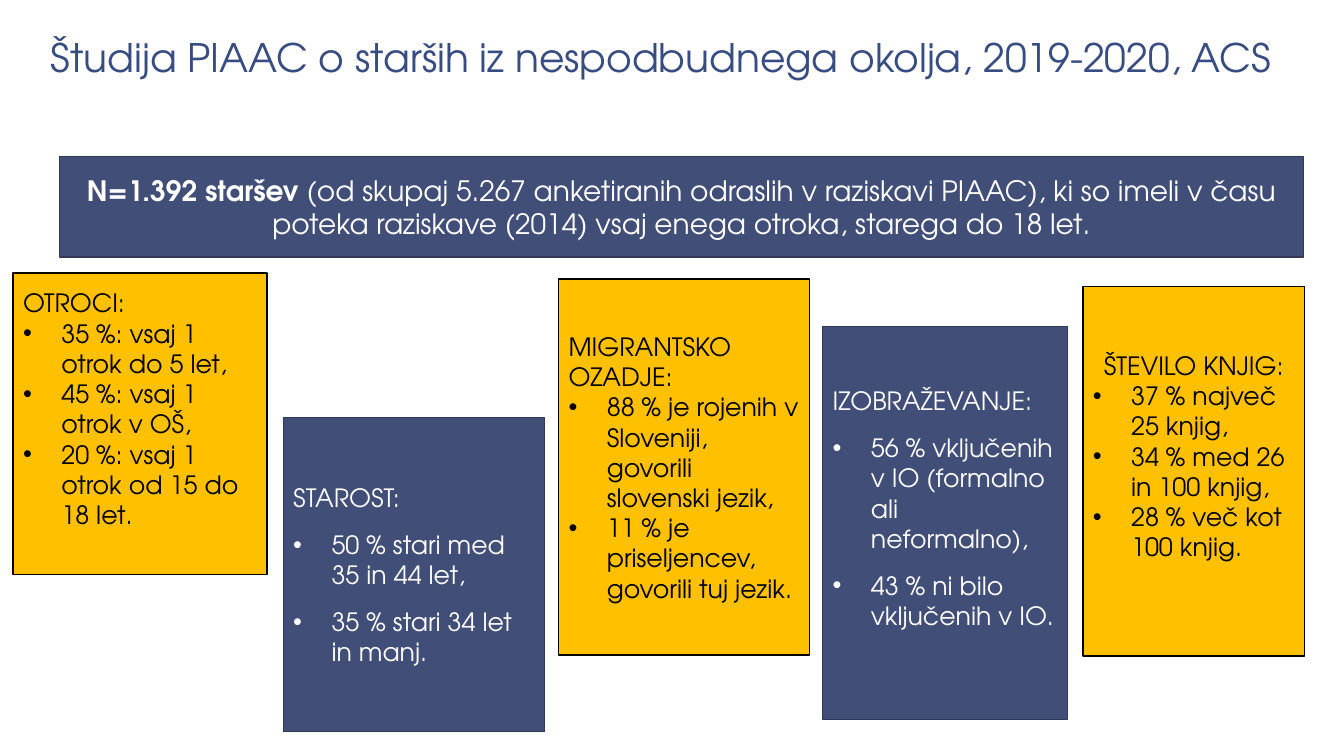
from dataclasses import dataclass

from lxml import etree
from pptx import Presentation
from pptx.dml.color import RGBColor
from pptx.enum.shapes import MSO_SHAPE
from pptx.enum.text import MSO_ANCHOR, MSO_AUTO_SIZE, PP_ALIGN
from pptx.oxml.ns import qn
from pptx.util import Inches, Pt

RECTANGLE = MSO_SHAPE.RECTANGLE
LEFT, CENTER = PP_ALIGN.LEFT, PP_ALIGN.CENTER
MIDDLE, BOTTOM = MSO_ANCHOR.MIDDLE, MSO_ANCHOR.BOTTOM
NO_AUTOFIT = MSO_AUTO_SIZE.NONE

FONT = "TeX Gyre Adventor"
BULLET_INDENT = 0.38
BASE_INSET = 0.05
LINE_HEIGHT = 0.3


@dataclass(frozen=True)
class Palette:
    fill: str
    line: str
    text: str


YELLOW = Palette("FFC000", "000000", "000000")
BLUE = Palette("414E77", "303A58", "FFFFFF")


@dataclass(frozen=True)
class Card:
    box: tuple[float, float, float, float]
    palette: Palette
    heading: str
    findings: tuple[str, ...]
    heading_align: PP_ALIGN = LEFT
    gap: int = 0
    free_lines: int = 0


CARDS = (
    Card((0.13, 2.71, 2.52, 2.99), YELLOW, "OTROCI:",
         ("35 %: vsaj 1 otrok do 5 let,", "45 %: vsaj 1 otrok v OŠ,",
          "20 %: vsaj 1 otrok od 15 do 18 let."), free_lines=1),
    Card((2.81, 4.14, 2.59, 3.12), BLUE, "STAROST:",
         ("50 % stari med 35 in 44 let,", "35 % stari 34 let in manj."), gap=12),
    Card((5.54, 2.77, 2.49, 3.73), YELLOW, "MIGRANTSKO OZADJE:",
         ("88 % je rojenih v Sloveniji, govorili slovenski jezik,",
          "11 % je priseljencev, govorili tuj jezik.")),
    Card((8.16, 3.24, 2.43, 3.9), BLUE, "IZOBRAŽEVANJE:",
         ("56 % vključenih v IO (formalno ali neformalno),",
          "43 % ni bilo vključenih v IO."), gap=12, free_lines=1),
    Card((10.74, 2.84, 2.2, 3.67), YELLOW, "ŠTEVILO KNJIG:",
         ("37 % največ 25 knjig,", "34 % med 26 in 100 knjig,",
          "28 % več kot 100 knjig."), heading_align=CENTER, free_lines=1),
)


def rgb(value: str) -> RGBColor:
    return RGBColor.from_string(value)


def write(paragraph, text: str, *, size: int, color: str, bold: bool = False,
          align: PP_ALIGN = LEFT, before: int = 0, bullet: bool = False) -> None:
    if bullet:
        properties = paragraph._p.get_or_add_pPr()
        properties.set("marL", str(Inches(BULLET_INDENT)))
        properties.set("indent", str(-Inches(BULLET_INDENT)))
        etree.SubElement(properties, qn("a:buFont")).set("typeface", "Arial")
        etree.SubElement(properties, qn("a:buChar")).set("char", "•")
    paragraph.alignment = align
    if before:
        paragraph.space_before = Pt(before)
    run = paragraph.add_run()
    run.text = text
    run.font.name = FONT
    run.font.size = Pt(size)
    run.font.bold = bold
    run.font.color.rgb = rgb(color)


def add_panel(slide, box: tuple[float, float, float, float], palette: Palette):
    panel = slide.shapes.add_shape(RECTANGLE, *map(Inches, box))
    panel.shadow.inherit = False
    panel.fill.solid()
    panel.fill.fore_color.rgb = rgb(palette.fill)
    panel.line.color.rgb = rgb(palette.line)
    panel.line.width = Pt(1)
    panel.text_frame.word_wrap = True
    panel.text_frame.vertical_anchor = MIDDLE
    return panel.text_frame


def add_title(slide) -> None:
    title = slide.shapes.title
    title.left, title.top, title.width, title.height = map(
        Inches, (0.37, 0.16, 12.76, 0.71))
    frame = title.text_frame
    frame.auto_size = NO_AUTOFIT
    frame.word_wrap = True
    frame.vertical_anchor = BOTTOM
    frame.margin_left = frame.margin_right = Inches(0.13)
    frame.margin_top = frame.margin_bottom = Inches(0.07)
    heading = frame.paragraphs[0]
    heading.line_spacing = 0.85
    write(heading, "Študija PIAAC o starših iz nespodbudnega okolja, 2019-2020, ACS",
          size=28, color="374C81")


def add_sample(slide) -> None:
    sample = add_panel(slide, (0.59, 1.55, 12.34, 1), BLUE).paragraphs[0]
    write(sample, "N=1.392 staršev ", size=20, color=BLUE.text, bold=True, align=CENTER)
    write(sample, "(od skupaj 5.267 anketiranih odraslih v raziskavi PIAAC), ki so imeli "
          "v času poteka raziskave (2014) vsaj enega otroka, starega do 18 let.",
          size=20, color=BLUE.text, align=CENTER)


def add_card(slide, card: Card) -> None:
    frame = add_panel(slide, card.box, card.palette)
    frame.margin_bottom = Inches(BASE_INSET + card.free_lines * LINE_HEIGHT)
    write(frame.paragraphs[0], card.heading, size=18, color=card.palette.text,
          align=card.heading_align)
    for finding in card.findings:
        write(frame.add_paragraph(), finding, size=18, color=card.palette.text,
              before=card.gap, bullet=True)


def main() -> None:
    deck = Presentation()
    deck.slide_width, deck.slide_height = Inches(13.33), Inches(7.5)
    slide = deck.slides.add_slide(deck.slide_layouts[5])
    add_title(slide)
    add_sample(slide)
    for card in CARDS:
        add_card(slide, card)
    deck.save("out.pptx")


if __name__ == "__main__":
    main()
